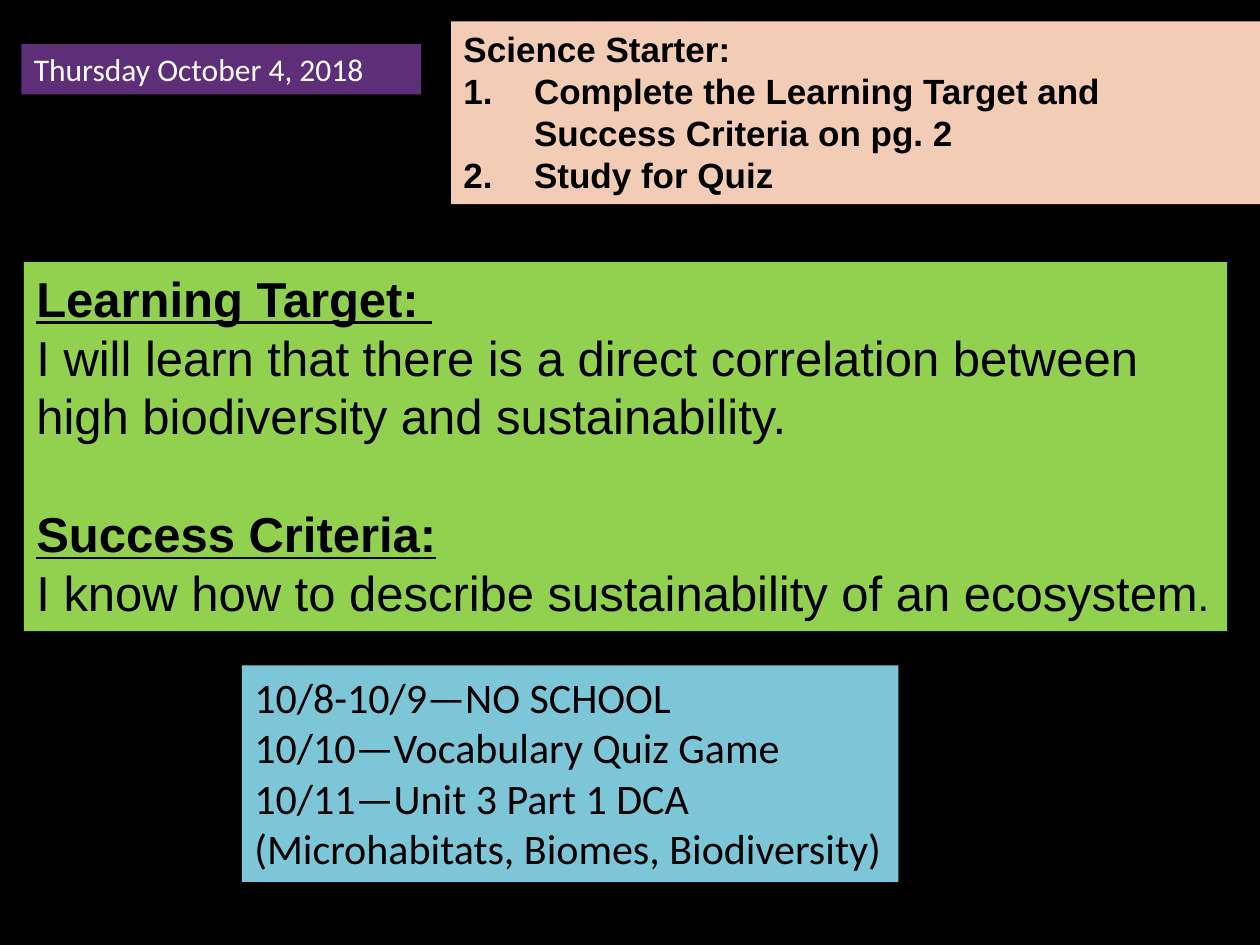
import pptx
import pptx.dml.color
import pptx.enum.text
import pptx.oxml.ns
import pptx.util
from lxml import etree

Inches = pptx.util.Inches
Pt = pptx.util.Pt
RGBColor = pptx.dml.color.RGBColor

BLACK = RGBColor(0x00, 0x00, 0x00)
WHITE = RGBColor(0xFF, 0xFF, 0xFF)
PURPLE = RGBColor(0x5E, 0x2E, 0x79)
PEACH = RGBColor(0xF2, 0xCC, 0xB5)
GREEN = RGBColor(0x92, 0xD0, 0x50)
BLUE = RGBColor(0x7C, 0xC6, 0xD8)

NUMBER_INDENT = Inches(0.56)
SECTION_GAP = Pt(33.7)


class Board:
    """Adds coloured note panels to one slide."""

    def __init__(self, slide, background):
        self.slide = slide
        fill = slide.background.fill
        fill.solid()
        fill.fore_color.rgb = background

    def panel(self, left, top, width, height, color):
        """Add a filled text panel and return its text frame."""
        box = self.slide.shapes.add_textbox(
            Inches(left), Inches(top), Inches(width), Inches(height))
        box.fill.solid()
        box.fill.fore_color.rgb = color
        frame = box.text_frame
        frame.word_wrap = True
        frame.auto_size = pptx.enum.text.MSO_AUTO_SIZE.SHAPE_TO_FIT_TEXT
        return frame

    def line(self, frame, text, size, font, color=BLACK, bold=False,
             underline=False, numbered=False, gap=None):
        first = frame.paragraphs[0]
        paragraph = frame.add_paragraph() if first.runs else first
        if numbered:
            self.number(paragraph)
        if gap is not None:
            paragraph.space_before = gap
        self.run(paragraph, text, size, font, color, bold, underline)
        return paragraph

    def run(self, paragraph, text, size, font, color=BLACK, bold=False,
            underline=False):
        run = paragraph.add_run()
        run.text = text
        run.font.size = Pt(size)
        run.font.name = font
        run.font.color.rgb = color
        run.font.bold = bold
        run.font.underline = underline

    def number(self, paragraph):
        """Turn the paragraph into an automatically numbered item."""
        properties = paragraph._p.get_or_add_pPr()
        properties.set("marL", str(NUMBER_INDENT))
        properties.set("indent", str(-NUMBER_INDENT))
        numbering = etree.SubElement(
            properties, pptx.oxml.ns.qn("a:buAutoNum"))
        numbering.set("type", "arabicPeriod")


def main():
    presentation = pptx.Presentation()
    presentation.slide_width = Inches(10)
    presentation.slide_height = Inches(7.5)
    blank = presentation.slide_layouts[6]
    board = Board(presentation.slides.add_slide(blank), BLACK)

    date = board.panel(0.17, 0.35, 3.17, 0.4, PURPLE)
    board.line(date, "Thursday October 4, 2018", 18, "Calibri", WHITE)

    starter = board.panel(3.58, 0.17, 6.42, 1.45, PEACH)
    board.line(starter, "Science Starter:", 20, "Arial", bold=True)
    for task in ("Complete the Learning Target and Success Criteria on pg. 2",
                 "Study for Quiz"):
        board.line(starter, task, 20, "Arial", bold=True, numbered=True)

    goals = board.panel(0.19, 2.08, 9.55, 2.93, GREEN)
    board.line(goals, "Learning Target: ", 28, "Arial",
               bold=True, underline=True)
    board.line(goals, "I will learn that there is a direct correlation between "
               "high biodiversity and sustainability.", 28, "Arial")
    board.line(goals, "Success Criteria:", 28, "Arial",
               bold=True, underline=True, gap=SECTION_GAP)
    criterion = board.line(
        goals, "I know how to describe sustainability of an ecosystem",
        28, "Arial")
    board.run(criterion, ".", 24, "Arial")

    schedule = board.panel(1.92, 5.28, 5.21, 1.72, BLUE)
    for entry in ("10/8-10/9—NO SCHOOL",
                  "10/10—Vocabulary Quiz Game",
                  "10/11—Unit 3 Part 1 DCA",
                  "(Microhabitats, Biomes, Biodiversity)"):
        board.line(schedule, entry, 24, "Calibri")

    presentation.save("out.pptx")


if __name__ == "__main__":
    main()
